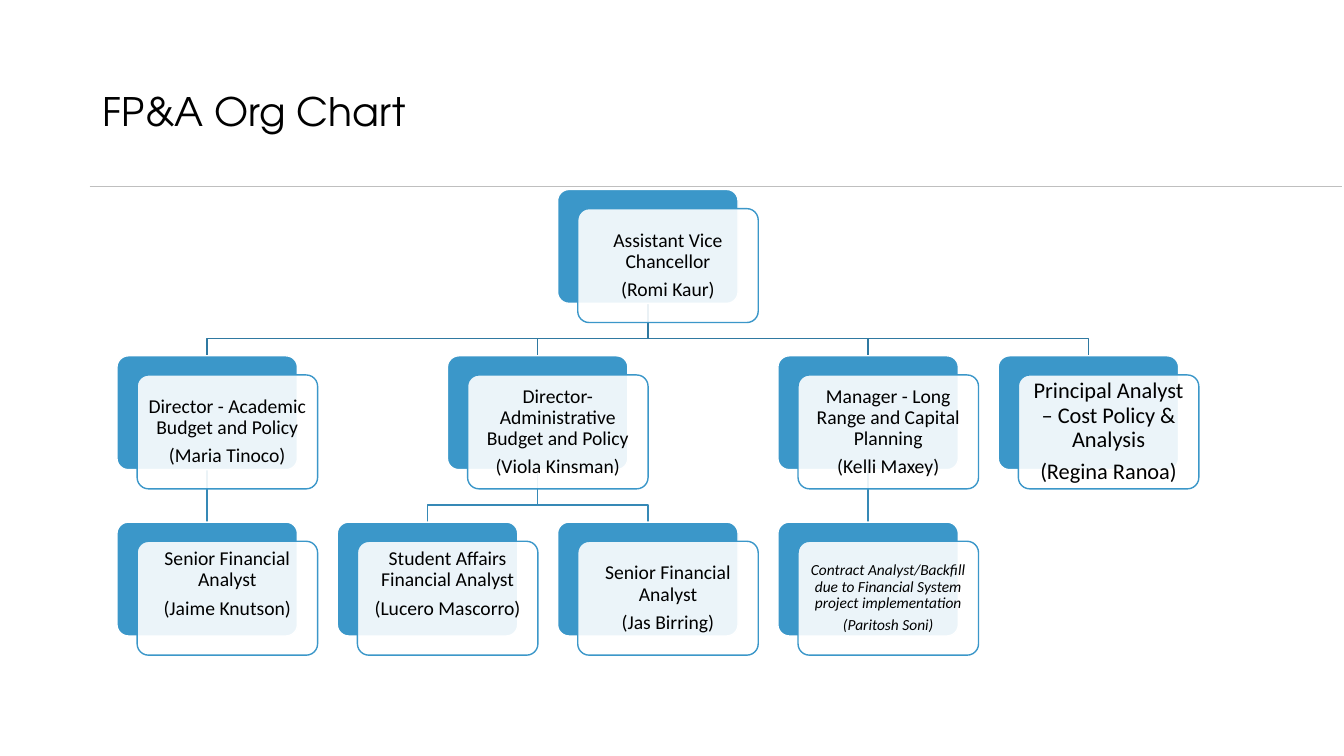
"""Build the FP&A organisation chart slide."""
from dataclasses import dataclass
from typing import Optional

from lxml.etree import SubElement
from pptx import Presentation
from pptx.dml.color import RGBColor
from pptx.enum.shapes import MSO_CONNECTOR, MSO_SHAPE
from pptx.enum.text import MSO_ANCHOR, PP_ALIGN
from pptx.oxml.ns import qn
from pptx.util import Inches, Pt


@dataclass(frozen=True)
class Theme:
    blue: RGBColor = RGBColor(0x3B, 0x97, 0xC9)
    upper_link: RGBColor = RGBColor(0x2F, 0x79, 0xA1)
    lower_link: RGBColor = RGBColor(0x36, 0x89, 0xB6)
    rule: RGBColor = RGBColor(0xBF, 0xBF, 0xBF)
    white: RGBColor = RGBColor(0xFF, 0xFF, 0xFF)
    black: RGBColor = RGBColor(0, 0, 0)
    title_font: str = "TeX Gyre Adventor"
    body_font: str = "Calibri"
    title_size: float = 28
    large: float = 16
    normal: float = 14
    small: float = 11


@dataclass(frozen=True)
class Position:
    role: str
    person: str
    col: float
    row: int
    boss: Optional[str] = None
    size: float = Theme.normal
    italic: bool = False
    lift: float = 0

    @property
    def left(self) -> float:
        return LEFT + self.col * COL_STEP

    @property
    def top(self) -> float:
        return TOP + self.row * ROW_STEP

    @property
    def center(self) -> float:
        return self.left + CARD_W / 2


THEME = Theme()
LEFT, TOP = 1.16, 1.88
COL_STEP, ROW_STEP = 2.185, 1.65
CARD_W, CARD_H = 1.79, 1.13
OFFSET_X, OFFSET_Y = 0.2, 0.19
ELBOW_DROP = 0.35
BLANK_LINE = 0.28

POSITIONS = [
    Position("Assistant Vice Chancellor", "Romi Kaur", 2, 0),
    Position("Director - Academic Budget and Policy", "Maria Tinoco", 0, 1, "Romi Kaur"),
    Position("Senior Financial Analyst", "Jaime Knutson", 0, 2, "Maria Tinoco", lift=BLANK_LINE),
    Position("Director- Administrative Budget and Policy", "Viola Kinsman", 1.5, 1, "Romi Kaur"),
    Position("Student Affairs Financial Analyst", "Lucero Mascorro", 1, 2, "Viola Kinsman",
             lift=BLANK_LINE),
    Position("Senior Financial Analyst", "Jas Birring", 2, 2, "Viola Kinsman"),
    Position("Manager - Long Range and Capital Planning", "Kelli Maxey", 3, 1, "Romi Kaur"),
    Position("Contract Analyst/Backfill due to Financial System project implementation",
             "Paritosh Soni", 3, 2, "Kelli Maxey", size=THEME.small, italic=True),
    Position("Principal Analyst – Cost Policy & Analysis", "Regina Ranoa", 4, 1, "Romi Kaur",
             size=THEME.large),
]


def add_line(shapes, x1: float, y1: float, x2: float, y2: float,
             color: RGBColor, width: float) -> None:
    sp = shapes.add_connector(MSO_CONNECTOR.STRAIGHT, Inches(x1), Inches(y1),
                              Inches(x2), Inches(y2))
    sp.line.color.rgb = color
    sp.line.width = Pt(width)
    SubElement(sp._element.spPr, qn("a:effectLst"))


def add_link(shapes, boss: Position, report: Position) -> None:
    color = THEME.lower_link if boss.row else THEME.upper_link
    start, end = boss.top + CARD_H, report.top
    if boss.col == report.col:
        add_line(shapes, boss.center, start, report.center, end, color, 1)
        return
    bend = start + ELBOW_DROP
    points = [(boss.center, bend), (report.center, bend), (report.center, end)]
    builder = shapes.build_freeform(Inches(boss.center), Inches(start))
    builder.add_line_segments([(Inches(x), Inches(y)) for x, y in points], close=False)
    sp = builder.convert_to_shape()
    sp.shadow.inherit = False
    sp.fill.background()
    sp.line.color.rgb = color
    sp.line.width = Pt(1)


def add_panel(shapes, x: float, y: float, fill: RGBColor, line: RGBColor):
    sp = shapes.add_shape(MSO_SHAPE.ROUNDED_RECTANGLE, Inches(x), Inches(y),
                          Inches(CARD_W), Inches(CARD_H))
    sp.adjustments[0] = 0.1
    sp.shadow.inherit = False
    sp.fill.solid()
    sp.fill.fore_color.rgb = fill
    sp.line.color.rgb = line
    sp.line.width = Pt(1)
    return sp


def add_text(p, text: str, *, size: float, font: str, italic: bool = False,
             align: PP_ALIGN = PP_ALIGN.CENTER, after: float = 0) -> None:
    p.alignment = align
    p.line_spacing = 0.9
    p.space_after = Pt(after)
    r = p.add_run()
    r.text = text
    r.font.name = font
    r.font.size = Pt(size)
    r.font.italic = italic
    r.font.color.rgb = THEME.black


def add_card(shapes, pos: Position) -> None:
    add_panel(shapes, pos.left, pos.top, THEME.blue, THEME.white)
    sp = add_panel(shapes, pos.left + OFFSET_X, pos.top + OFFSET_Y, THEME.white, THEME.blue)
    color = sp._element.spPr.find(qn("a:solidFill")).find(qn("a:srgbClr"))
    SubElement(color, qn("a:alpha")).set("val", "90000")
    tf = sp.text_frame
    tf.word_wrap = True
    tf.vertical_anchor = MSO_ANCHOR.MIDDLE
    inset = round(pos.size * 0.0044, 2)
    tf.margin_left = tf.margin_right = tf.margin_top = Inches(inset)
    tf.margin_bottom = Inches(inset + pos.lift)
    for p, text in ((tf.paragraphs[0], pos.role), (tf.add_paragraph(), f"({pos.person})")):
        add_text(p, text, size=pos.size, font=THEME.body_font, italic=pos.italic,
                 after=pos.size * 0.35)


def add_title(slide, text: str) -> None:
    sp = slide.shapes.title
    sp.left, sp.top, sp.width, sp.height = map(Inches, (0.92, 0.4, 11.5, 1.45))
    tf = sp.text_frame
    tf.word_wrap = True
    tf.vertical_anchor = MSO_ANCHOR.MIDDLE
    add_text(tf.paragraphs[0], text, size=THEME.title_size, font=THEME.title_font,
             align=PP_ALIGN.LEFT)


def main() -> None:
    prs = Presentation()
    prs.slide_width, prs.slide_height = Inches(13.33), Inches(7.5)
    slide = prs.slides.add_slide(prs.slide_layouts[5])
    add_title(slide, "FP&A Org Chart")
    add_line(slide.shapes, 0.89, 1.85, 13.31, 1.85, THEME.rule, 0.5)
    by_person = {pos.person: pos for pos in POSITIONS}
    for pos in POSITIONS:
        if pos.boss:
            add_link(slide.shapes, by_person[pos.boss], pos)
    for pos in POSITIONS:
        add_card(slide.shapes, pos)
    prs.save("out.pptx")


if __name__ == "__main__":
    main()
